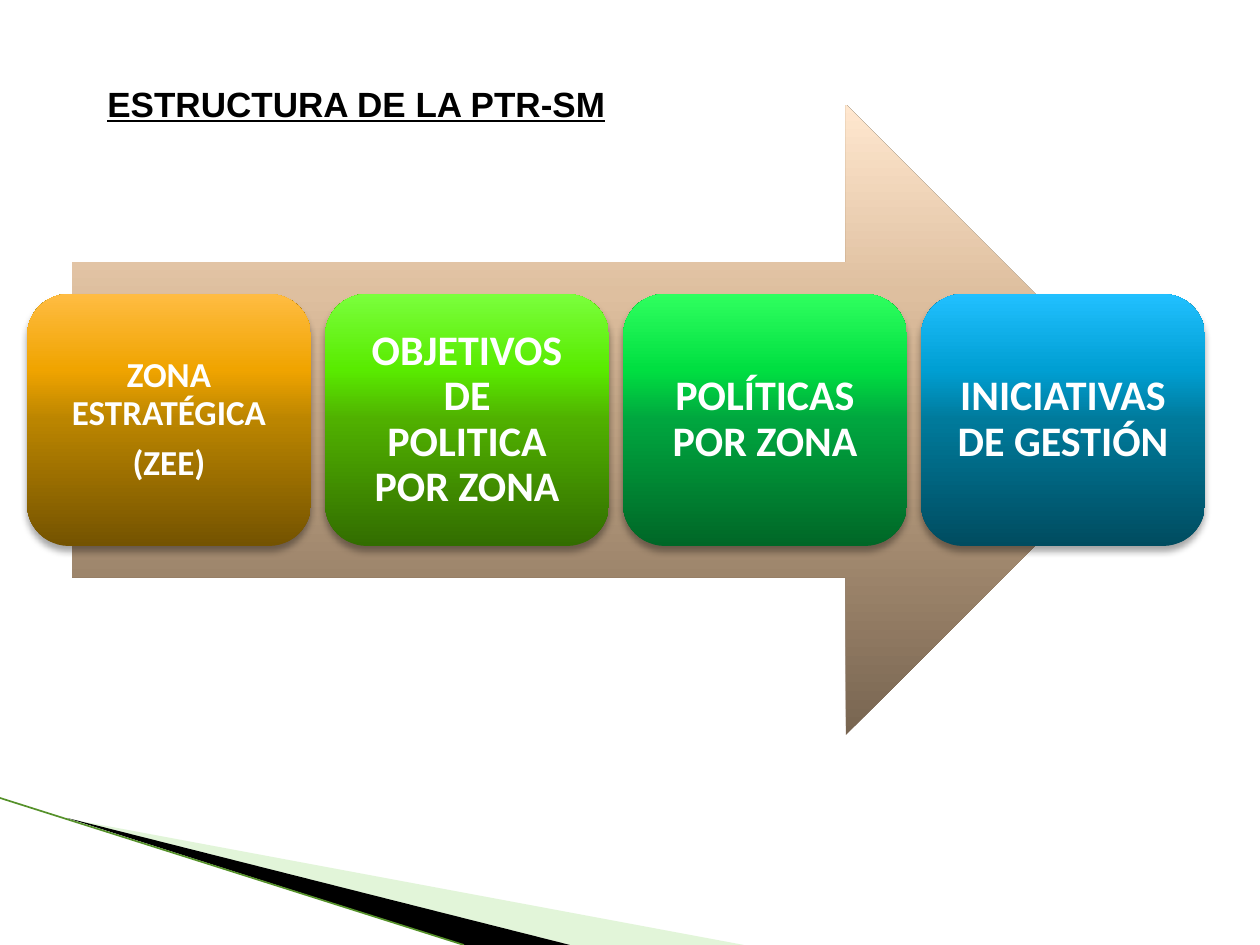
from lxml.etree import SubElement
from pptx import Presentation
from pptx.dml.color import RGBColor
from pptx.enum.shapes import MSO_CONNECTOR, MSO_SHAPE
from pptx.enum.text import MSO_ANCHOR, PP_ALIGN
from pptx.oxml.ns import qn
from pptx.util import Pt

EMU_PER_PX = 914400 / 126
PAGE_WIDTH, PAGE_HEIGHT = 1260, 945
STOPS = (0, 50, 70, 100)

ARROW_COLORS = ("786551", "C0A384", "DEBF9F", "FFE7CF")
STEPS = [
    (["ZONA ESTRATÉGICA", "(ZEE)"], 20, ("745300", "BB8500", "F0A400", "FFBC42")),
    (["OBJETIVOS DE POLITICA POR ZONA"], 24, ("326D00", "50B000", "59EB00", "7AFF3C")),
    (["POLÍTICAS POR ZONA"], 24, ("006727", "00A63F", "00DF41", "2FFF5F")),
    (["INICIATIVAS DE GESTIÓN"], 24, ("004C60", "007A9B", "009FD3", "21C0FF")),
]
STEP_LEFT, STEP_TOP, STEP_WIDTH, STEP_HEIGHT, STEP_GAP = 27, 294, 284, 252, 14


def px(length):
    return round(length * EMU_PER_PX)


def rgb(color):
    return RGBColor.from_string(color)


def add_text(para, text, font="Calibri", size=24, color="FFFFFF", underline=False):
    span = para.add_run()
    span.text = text
    span.font.name = font
    span.font.size = Pt(size)
    span.font.bold = True
    span.font.underline = underline
    span.font.color.rgb = rgb(color)


def add_alpha(parent, color, percent):
    """Add a colour element with the given opacity."""
    node = SubElement(parent, qn("a:srgbClr"), val=color)
    SubElement(node, qn("a:alpha"), val=str(percent * 1000))


class PageBuilder:
    def __init__(self, page):
        self.shapes = page.shapes

    def wedge(self, points, color, opacity=100):
        builder = self.shapes.build_freeform(*points[0], scale=EMU_PER_PX)
        builder.add_line_segments(points[1:], close=True)
        shape = builder.convert_to_shape()
        shape.shadow.inherit = False
        shape.line.fill.background()
        shape.fill.solid()
        shape.fill.fore_color.rgb = rgb(color)
        if opacity < 100:
            solid = shape.element.spPr.find(qn("a:solidFill"))
            solid.clear()
            add_alpha(solid, color, opacity)

    def line(self, start, end, color, width):
        line = self.shapes.add_connector(
            MSO_CONNECTOR.STRAIGHT, *map(px, start + end))
        line.line.color.rgb = rgb(color)
        line.line.width = Pt(width)
        SubElement(line.element.spPr, qn("a:effectLst"))

    def gradient_shape(self, kind, left, top, width, height, colors):
        """Add a preset shape whose colours run from bottom to top."""
        shape = self.shapes.add_shape(kind, *map(px, (left, top, width, height)))
        shape.shadow.inherit = False
        shape.line.fill.background()
        shape.fill.gradient()
        shape.fill.gradient_angle = 90
        stops = shape.element.spPr.find(qn("a:gradFill")).find(qn("a:gsLst"))
        stops.clear()
        for position, color in zip(STOPS, colors):
            stop = SubElement(stops, qn("a:gs"), pos=str(position * 1000))
            SubElement(stop, qn("a:srgbClr"), val=color)
        return shape

    def step(self, left, texts, size, colors):
        shape = self.gradient_shape(MSO_SHAPE.ROUNDED_RECTANGLE, left, STEP_TOP,
                                    STEP_WIDTH, STEP_HEIGHT, colors)
        effects = shape.element.spPr.find(qn("a:effectLst"))
        shadow = SubElement(effects, qn("a:outerShdw"), blurRad=str(Pt(4)),
                            dist=str(Pt(3)), dir="5400000", rotWithShape="0")
        add_alpha(shadow, "000000", 35)
        frame = shape.text_frame
        frame.word_wrap = True
        frame.vertical_anchor = MSO_ANCHOR.MIDDLE
        frame.margin_left = frame.margin_right = px(size)
        frame.margin_top = frame.margin_bottom = px(size)
        for index, text in enumerate(texts):
            para = frame.add_paragraph() if index else frame.paragraphs[0]
            para.alignment = PP_ALIGN.CENTER
            para.line_spacing = 0.9
            para.space_after = Pt(size * 0.35)
            add_text(para, text, size=size)

    def title(self, left, top, width, height, text):
        box = self.shapes.add_textbox(*map(px, (left, top, width, height)))
        box.text_frame.word_wrap = False
        add_text(box.text_frame.paragraphs[0], text, font="Arial", size=20,
                 color="000000", underline=True)


def main():
    deck = Presentation()
    deck.slide_width, deck.slide_height = px(PAGE_WIDTH), px(PAGE_HEIGHT)
    builder = PageBuilder(deck.slides.add_slide(deck.slide_layouts[6]))

    builder.wedge([(69, 819), (744, 945), (570, 945)], "B8E7A1", opacity=40)
    builder.wedge([(67, 818), (570, 945), (464, 945)], "000000")
    builder.line((0, 798), (464, 945), "55912A", 0.95)

    builder.gradient_shape(MSO_SHAPE.RIGHT_ARROW, 72, 105, 1089, 630, ARROW_COLORS)
    for index, (texts, size, colors) in enumerate(STEPS):
        left = STEP_LEFT + index * (STEP_WIDTH + STEP_GAP)
        builder.step(left, texts, size, colors)
    builder.title(95, 76, 528, 55, "ESTRUCTURA DE LA PTR-SM")

    deck.save("out.pptx")


if __name__ == "__main__":
    main()
